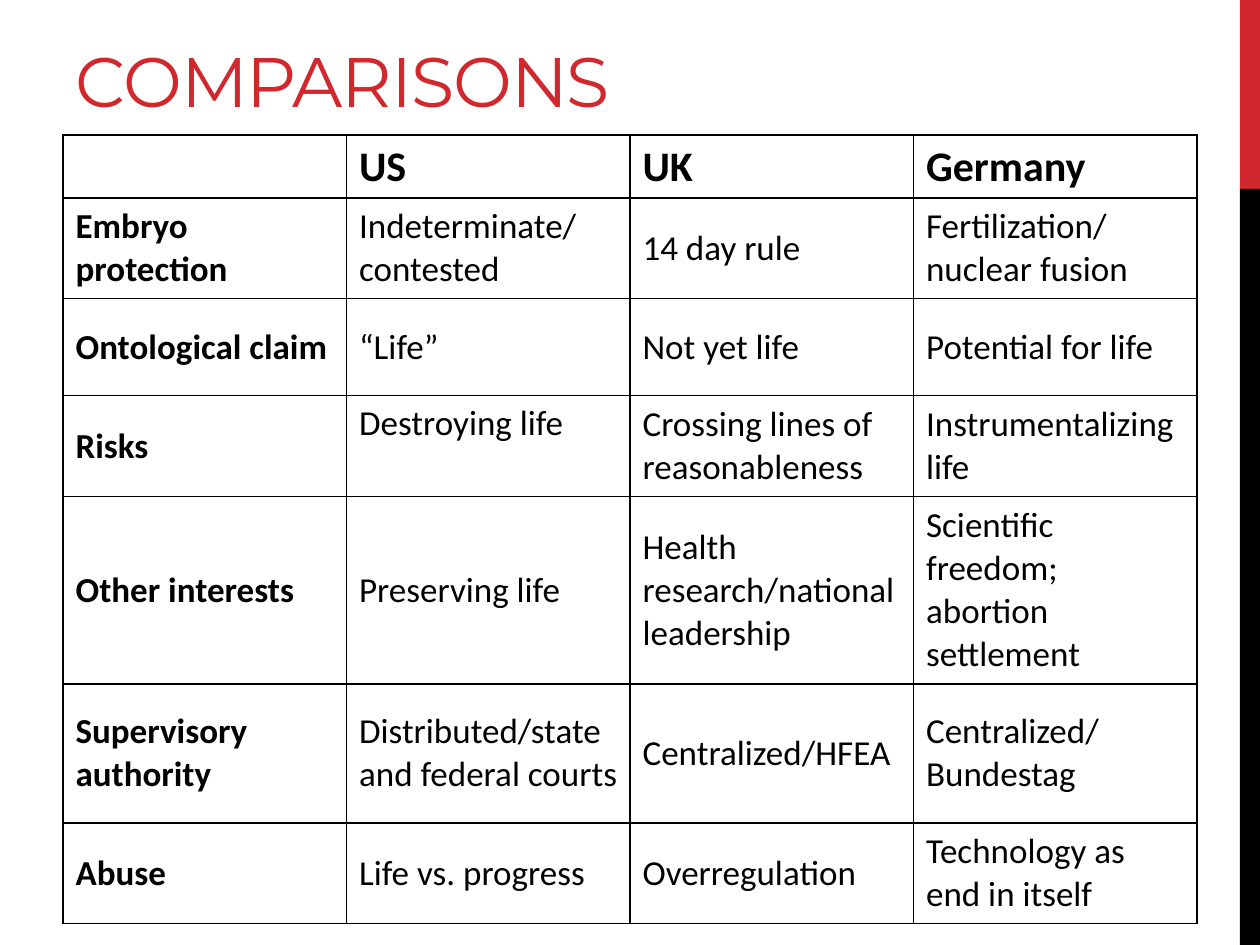
from lxml import etree
from pptx import Presentation
from pptx import util as u
from pptx.dml.color import RGBColor
from pptx.enum import shapes, text
from pptx.oxml import ns

COLORS = {"red": "D1282E", "black": "000000"}
ROWS = [
    ["", "US", "UK", "Germany"],
    ["Embryo protection", "Indeterminate/contested", "14 day rule", "Fertilization/nuclear fusion"],
    ["Ontological claim", "“Life”", "Not yet life", "Potential for life"],
    ["Risks", "Destroying life", "Crossing lines of reasonableness", "Instrumentalizing life"],
    ["Other interests", "Preserving life", "Health research/national leadership",
     "Scientific freedom; abortion settlement"],
    ["Supervisory authority", "Distributed/state and federal courts", "Centralized/HFEA",
     "Centralized/Bundestag"],
    ["Abuse", "Life vs. progress", "Overregulation", "Technology as end in itself"],
]
ROW_HEIGHTS = [0.5, 0.8, 0.77, 0.8, 1.49, 1.1, 0.8]
TOP_ALIGNED = {"Destroying life"}

presentation = Presentation()
presentation.slide_width, presentation.slide_height = u.Inches(10), u.Inches(7.5)
width, height = presentation.slide_width, presentation.slide_height
slide = presentation.slides.add_slide(presentation.slide_layouts[6])
margin = width // 20
content_width = width - 2 * margin


def write(frame, words, size=20, font="Calibri", color="black", bold=False, spacing=None):
    paragraph = frame.paragraphs[0]
    paragraph.alignment = text.PP_ALIGN.LEFT
    run = paragraph.add_run()
    run.text = words
    run.font.size = u.Pt(size)
    run.font.name = font
    run.font.bold = bold
    run.font.color.rgb = RGBColor.from_string(COLORS[color])
    if spacing is not None:
        run.font._element.set("spc", str(round(spacing * 100)))


def add_borders(cell):
    properties = cell._tc.get_or_add_tcPr()
    for position, side in enumerate(("lnL", "lnR", "lnT", "lnB")):
        line = etree.Element(ns.qn(f"a:{side}"), w=str(u.Pt(1)))
        fill = etree.SubElement(line, ns.qn("a:solidFill"))
        etree.SubElement(fill, ns.qn("a:srgbClr"), val=COLORS["black"])
        properties.insert(position, line)


bar_left = round(width * 0.984)
bar_split = height // 5
for color, top, bottom in (("red", 0, bar_split), ("black", bar_split, height)):
    bar = slide.shapes.add_shape(
        shapes.MSO_SHAPE.RECTANGLE, bar_left, top, width - bar_left, bottom - top)
    bar.shadow.inherit = False
    bar.fill.solid()
    bar.fill.fore_color.rgb = RGBColor.from_string(COLORS[color])
    bar.line.fill.background()

title = slide.shapes.add_textbox(margin, round(height * 0.02), content_width, round(height * 0.115))
title.text_frame.word_wrap = True
title.text_frame.vertical_anchor = text.MSO_ANCHOR.BOTTOM
write(title.text_frame, "COMPARISONS", size=40, font="Montserrat", color="red", spacing=-0.6)

table = slide.shapes.add_table(
    len(ROWS), len(ROWS[0]), margin, u.Inches(1.07), content_width, u.Inches(sum(ROW_HEIGHTS))).table
table.first_row = table.horz_banding = False
for row_index, (row, row_height) in enumerate(zip(ROWS, ROW_HEIGHTS)):
    table.rows[row_index].height = u.Inches(row_height)
    is_header = row_index == 0
    for column_index, words in enumerate(row):
        cell = table.cell(row_index, column_index)
        cell.fill.background()
        add_borders(cell)
        at_top = is_header or words in TOP_ALIGNED
        cell.vertical_anchor = text.MSO_ANCHOR.TOP if at_top else text.MSO_ANCHOR.MIDDLE
        if words:
            write(cell.text_frame, words, size=24 if is_header else 20,
                  bold=is_header or column_index == 0)

presentation.save("out.pptx")
